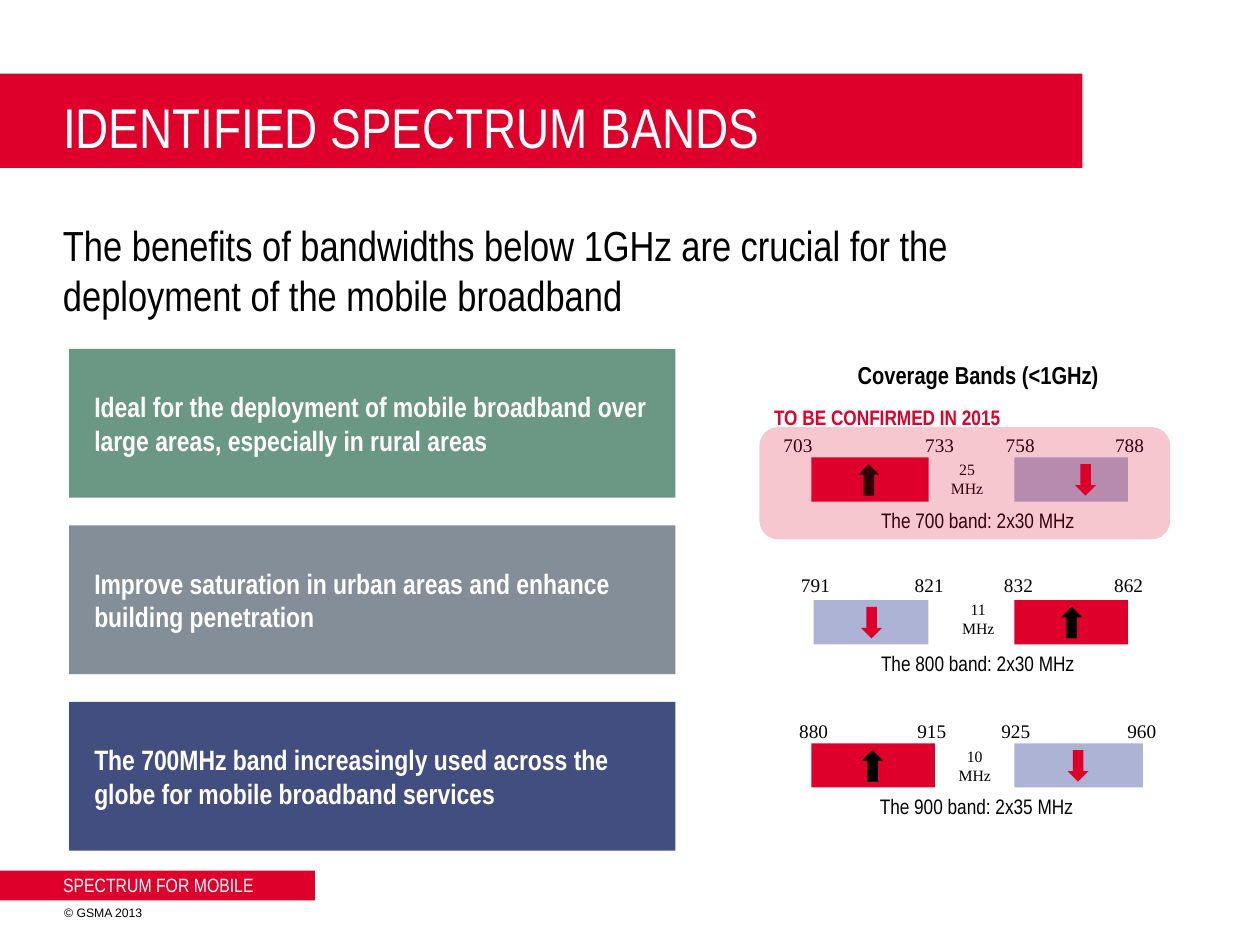
"""Build the slide on identified spectrum bands below 1 GHz."""
import dataclasses

import lxml.etree
import pptx
import pptx.dml.color
import pptx.enum.shapes
import pptx.enum.text
import pptx.oxml.ns
import pptx.util

Pt = pptx.util.Pt
Shape = pptx.enum.shapes.MSO_SHAPE
Align = pptx.enum.text.PP_ALIGN
Anchor = pptx.enum.text.MSO_ANCHOR


@dataclasses.dataclass(frozen=True)
class Theme:
    """Colours, fonts and type sizes of the slide."""
    red: str = "DE002B"
    lilac: str = "ACB3D4"
    green: str = "6B9785"
    grey: str = "838E99"
    navy: str = "434E80"
    black: str = "000000"
    white: str = "FFFFFF"
    heading_font: str = "Arial Narrow"
    number_font: str = "Times New Roman"
    small_font: str = "Arial"
    title: int = 32
    lead: int = 24
    card: int = 16
    chart_heading: int = 14
    caption: int = 12
    number: int = 11
    gap: int = 9
    copyright: int = 7


@dataclasses.dataclass(frozen=True)
class Band:
    """One paired frequency band and its places on the slide."""
    name: str
    caption_center: float
    label_top: float
    bar_top: float
    labels: tuple
    bars: tuple
    gap: tuple


class SlideBuilder:
    """Draws styled elements on the current page."""

    def __init__(self, page, theme):
        self.page = page
        self.theme = theme

    def fill_text(self, box, lines, size, color, font=None, bold=False,
                  align=Align.LEFT, anchor=Anchor.TOP, insets=(0, 0, 0, 0)):
        """Fill a box with styled lines of text."""
        frame = box.text_frame
        frame.word_wrap = True
        frame.auto_size = pptx.enum.text.MSO_AUTO_SIZE.NONE
        frame.vertical_anchor = anchor
        (frame.margin_left, frame.margin_top,
         frame.margin_right, frame.margin_bottom) = map(Pt, insets)
        for index, line in enumerate(lines):
            para = frame.add_paragraph() if index else frame.paragraphs[0]
            para.alignment = align
            span = para.add_run()
            span.text = line
            span.font.size = Pt(size)
            span.font.name = font or self.theme.heading_font
            span.font.bold = bold
            span.font.color.rgb = pptx.dml.color.RGBColor.from_string(color)

    def text(self, left, top, width, height, lines, size, color, **style):
        """Add a text box."""
        box = self.page.shapes.add_textbox(*map(Pt, (left, top, width, height)))
        self.fill_text(box, lines, size, color, **style)

    def centered(self, center, top, width, height, lines, size, **style):
        """Add a black text box centred on a horizontal position."""
        self.text(center - width / 2, top, width, height, lines, size,
                  self.theme.black, align=Align.CENTER, **style)

    def shape(self, left, top, width, height, color, kind=Shape.RECTANGLE, opacity=100):
        """Add a filled shape without outline."""
        shape = self.page.shapes.add_shape(kind, *map(Pt, (left, top, width, height)))
        shape.shadow.inherit = False
        shape.line.fill.background()
        shape.fill.solid()
        shape.fill.fore_color.rgb = pptx.dml.color.RGBColor.from_string(color)
        if opacity < 100:
            tag = pptx.oxml.ns.qn("a:srgbClr")
            paint = next(shape.element.spPr.iter(tag))
            alpha = lxml.etree.SubElement(paint, pptx.oxml.ns.qn("a:alpha"))
            alpha.set("val", str(opacity * 1000))
        return shape

    def title(self, wording):
        """Place the title on its red bar."""
        bar = self.shape(-2, 42, 620.5, 54, self.theme.red)
        title = self.page.shapes.title
        title.left, title.top, title.width, title.height = map(Pt, (36, 45, 582.5, 54))
        self.fill_text(title, [wording], self.theme.title, self.theme.white,
                       anchor=Anchor.MIDDLE)
        title.element.addprevious(bar.element)

    def card(self, top, wording, color):
        """Add a coloured statement card."""
        card = self.shape(39.5, top, 346.5, 85, color)
        self.fill_text(card, [wording], self.theme.card, self.theme.white, bold=True,
                       anchor=Anchor.MIDDLE, insets=(14.4, 3.6, 14.4, 3.6))

    def arrow(self, center, middle, upward):
        """Add an uplink or downlink arrow."""
        color = self.theme.black if upward else self.theme.red
        arrow = self.shape(center - 9, middle - 6, 18, 12, color, Shape.RIGHT_ARROW)
        arrow.rotation = 270 if upward else 90

    def band(self, band):
        """Draw the bars, arrows and labels of one band."""
        theme = self.theme
        for left, width, arrow_center, upward in band.bars:
            self.shape(left, band.bar_top, width, 25.2,
                       theme.red if upward else theme.lilac)
            self.arrow(arrow_center, band.bar_top + 12.8, upward)
        for center, frequency in band.labels:
            self.centered(center, band.label_top, 31, 21, [frequency], theme.number,
                          font=theme.number_font, insets=(0, 3.6, 0, 3.6))
        center, top, width = band.gap
        self.centered(center, top, 40, 29, [width, "MHz"], theme.gap,
                      font=theme.number_font, insets=(0, 3.6, 0, 3.6))
        self.centered(band.caption_center, band.bar_top + 25.2, 200, 21.6, [band.name],
                      theme.caption, insets=(7.2, 3.6, 7.2, 3.6))


def main():
    """Build and save the deck."""
    theme = Theme()
    deck = pptx.Presentation()
    deck.slide_width, deck.slide_height = Pt(720), Pt(540)
    builder = SlideBuilder(deck.slides.add_slide(deck.slide_layouts[5]), theme)

    builder.title("IDENTIFIED SPECTRUM BANDS")
    builder.shape(-2, 497.5, 182, 17, theme.red)
    builder.text(36, 497.5, 215, 16, ["SPECTRUM FOR MOBILE"], theme.number,
                 theme.white, anchor=Anchor.MIDDLE)
    builder.text(36.7, 515.5, 107, 12, ["© GSMA 2013"], theme.copyright,
                 theme.black, font=theme.small_font, anchor=Anchor.MIDDLE)
    builder.text(36, 125.3, 520, 60,
                 ["The benefits of bandwidths below 1GHz are crucial for the "
                  "deployment of the mobile broadband"], theme.lead, theme.black)

    cards = (
        ("Ideal for the deployment of mobile broadband over large areas, "
         "especially in rural areas", theme.green),
        ("Improve saturation in urban areas and enhance building penetration",
         theme.grey),
        ("The 700MHz band increasingly used across the globe for mobile "
         "broadband services", theme.navy),
    )
    for index, (wording, color) in enumerate(cards):
        builder.card(199.3 + 100.9 * index, wording, color)

    builder.centered(559, 202.3, 160, 24.5, ["Coverage Bands (<1GHz)"],
                     theme.chart_heading, bold=True, insets=(0, 3.6, 0, 3.6))
    bands = (
        Band("The 700 band: 2x30 MHz", 558.7, 244, 261.4,
             ((456, "703"), (537, "733"), (583, "758"), (645.5, "788")),
             ((463.7, 67, 496.5, True), (579.6, 65, 620.3, False)),
             (552.6, 259.2, "25")),
        Band("The 800 band: 2x30 MHz", 558.7, 324, 343,
             ((466, "791"), (531, "821"), (582, "832"), (645, "862")),
             ((465, 65.5, 498, False), (579.6, 65, 612.4, True)),
             (559, 339.2, "11")),
        Band("The 900 band: 2x35 MHz", 558, 407.6, 424.8,
             ((465, "880"), (532.5, "915"), (580.5, "925"), (652.5, "960")),
             ((463.7, 70.5, 498.6, True), (579.6, 73.5, 616, False)),
             (557, 423.4, "10")),
    )
    for band in bands:
        builder.band(band)

    builder.shape(434, 244, 234.7, 64.2, theme.red, Shape.ROUNDED_RECTANGLE, opacity=22)
    builder.text(432, 231.2, 150, 14.4, ["TO BE CONFIRMED IN 2015"], theme.caption,
                 theme.red, bold=True, align=Align.CENTER, anchor=Anchor.MIDDLE)
    deck.save("out.pptx")


if __name__ == "__main__":
    main()
